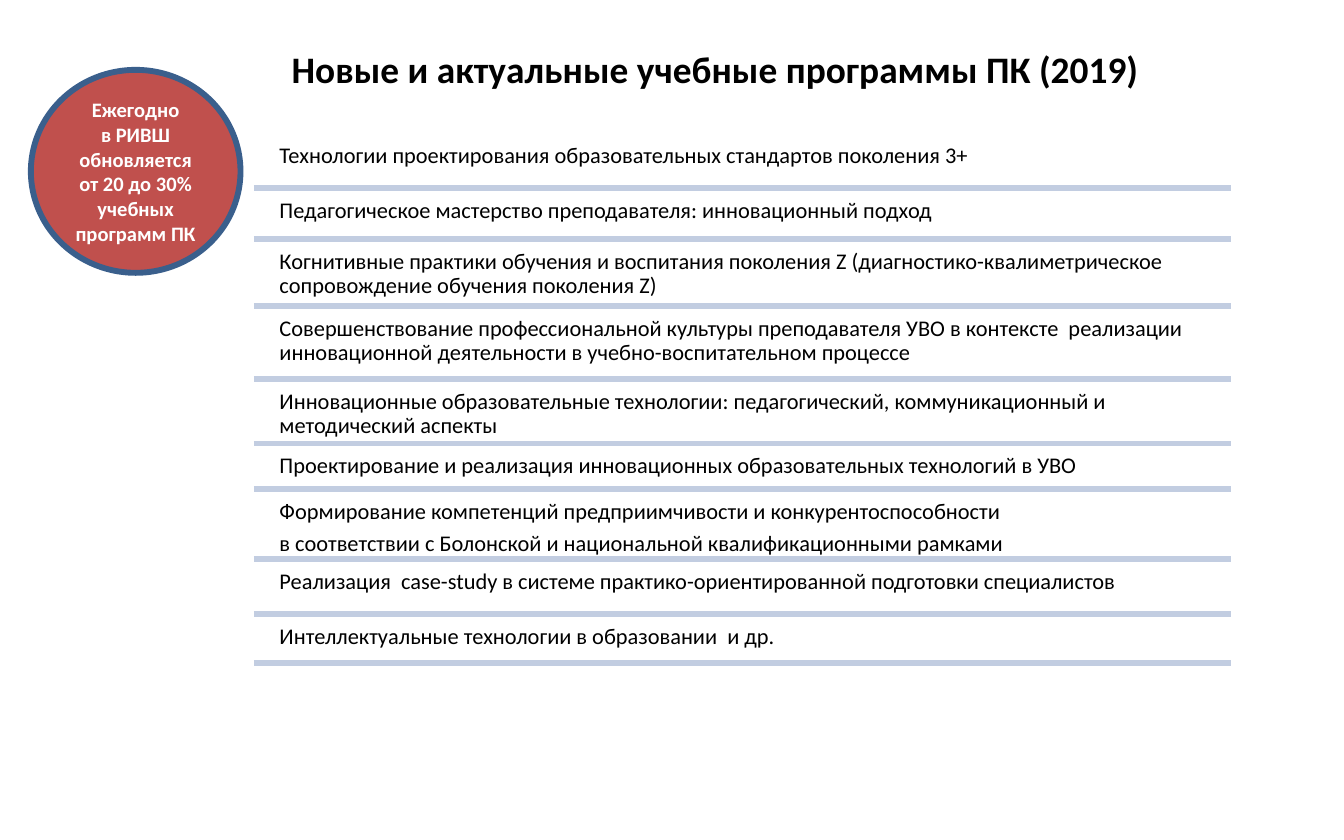
from dataclasses import dataclass

from lxml import etree
from pptx import Presentation
from pptx import util as u
from pptx.dml.color import RGBColor
from pptx.enum import shapes, text
from pptx.oxml.ns import qn


@dataclass(frozen=True)
class Theme:
    font: str = "Calibri"
    ink: str = "000000"
    rule: str = "C2CDE1"
    badge: str = "C0504D"
    badge_line: str = "3A5F8C"
    badge_text: str = "FFFFFF"
    title_size: float = 20
    row_size: float = 12
    badge_size: float = 11
    line_width: float = 3.15


@dataclass(frozen=True)
class Programme:
    name: str
    bottom: float


THEME = Theme()
RULE_LEFT, RIGHT = 1.89, 9.16
TEXT_LEFT = 2.03
LIST_TOP, ROW_GAP, ROW_INSET = 1.02, 0.03, 0.05

TITLE = "Новые и актуальные учебные программы ПК (2019)"
BADGE = "Ежегодно\nв РИВШ обновляется\nот 20 до 30% учебных программ ПК"
PROGRAMMES = [
    Programme("Технологии проектирования образовательных стандартов поколения 3+", 1.4),
    Programme("Педагогическое мастерство преподавателя: инновационный подход", 1.78),
    Programme("Когнитивные практики обучения и воспитания поколения Z "
              "(диагностико-квалиметрическое сопровождение обучения поколения Z)", 2.28),
    Programme("Совершенствование профессиональной культуры преподавателя УВО в контексте  "
              "реализации инновационной деятельности в учебно-воспитательном процессе", 2.82),
    Programme("Инновационные образовательные технологии: педагогический, "
              "коммуникационный и методический аспекты", 3.3),
    Programme("Проектирование и реализация инновационных образовательных технологий в УВО", 3.64),
    Programme("Формирование компетенций предприимчивости и конкурентоспособности\n"
              "в соответствии с Болонской и национальной квалификационными рамками", 4.16),
    Programme("Реализация  case-study в системе практико-ориентированной "
              "подготовки специалистов", 4.57),
    Programme("Интеллектуальные технологии в образовании  и др.", 4.93),
]


def write(tf, content: str, size: float, color: str, bold: bool = False,
          align=text.PP_ALIGN.LEFT) -> None:
    tf.text = content
    tf.word_wrap = True
    tf.auto_size = text.MSO_AUTO_SIZE.NONE
    for p in tf.paragraphs:
        p.alignment = align
        for r in p.runs:
            r.font.name, r.font.size, r.font.bold = THEME.font, u.Pt(size), bold
            r.font.color.rgb = RGBColor.from_string(color)


def set_line(line, color: str) -> None:
    line.color.rgb = RGBColor.from_string(color)
    line.width = u.Pt(THEME.line_width)


def add_title(s) -> None:
    sp = s.shapes.title
    sp.left, sp.top = u.Inches(2.07), u.Inches(0.29)
    sp.width, sp.height = u.Inches(7.9), u.Inches(0.44)
    write(sp.text_frame, TITLE, THEME.title_size, THEME.ink, bold=True)
    sp.text_frame.vertical_anchor = text.MSO_ANCHOR.TOP


def add_programme(s, programme: Programme, top: float) -> None:
    """Draw one programme name with the rule that closes its row."""
    sp = s.shapes.add_textbox(u.Inches(TEXT_LEFT), u.Inches(top),
                              u.Inches(RIGHT - TEXT_LEFT), u.Inches(programme.bottom - top))
    tf = sp.text_frame
    tf.margin_left = tf.margin_right = u.Inches(ROW_INSET)
    tf.margin_top = tf.margin_bottom = u.Inches(ROW_INSET)
    write(tf, programme.name, THEME.row_size, THEME.ink)
    for p in tf.paragraphs:
        p.line_spacing = 0.9
        p.space_after = u.Pt(0.35 * THEME.row_size)

    y = u.Inches(programme.bottom)
    rule = s.shapes.add_connector(shapes.MSO_CONNECTOR.STRAIGHT,
                                  u.Inches(RULE_LEFT), y, u.Inches(RIGHT), y)
    set_line(rule.line, THEME.rule)
    etree.SubElement(rule._element.spPr, qn("a:effectLst"))


def add_badge(s) -> None:
    sp = s.shapes.add_shape(shapes.MSO_SHAPE.OVAL, u.Inches(0.23), u.Inches(0.52),
                            u.Inches(1.56), u.Inches(1.51))
    sp.shadow.inherit = False
    sp.fill.solid()
    sp.fill.fore_color.rgb = RGBColor.from_string(THEME.badge)
    set_line(sp.line, THEME.badge_line)
    write(sp.text_frame, BADGE, THEME.badge_size, THEME.badge_text, bold=True,
          align=text.PP_ALIGN.CENTER)
    sp.text_frame.vertical_anchor = text.MSO_ANCHOR.MIDDLE


def main() -> None:
    prs = Presentation()
    prs.slide_width, prs.slide_height = u.Inches(10), u.Inches(6.25)
    s = prs.slides.add_slide(prs.slide_layouts.get_by_name("Title Only"))
    add_title(s)
    top = LIST_TOP
    for programme in PROGRAMMES:
        add_programme(s, programme, top)
        top = programme.bottom + ROW_GAP
    add_badge(s)
    prs.save("out.pptx")


if __name__ == "__main__":
    main()
